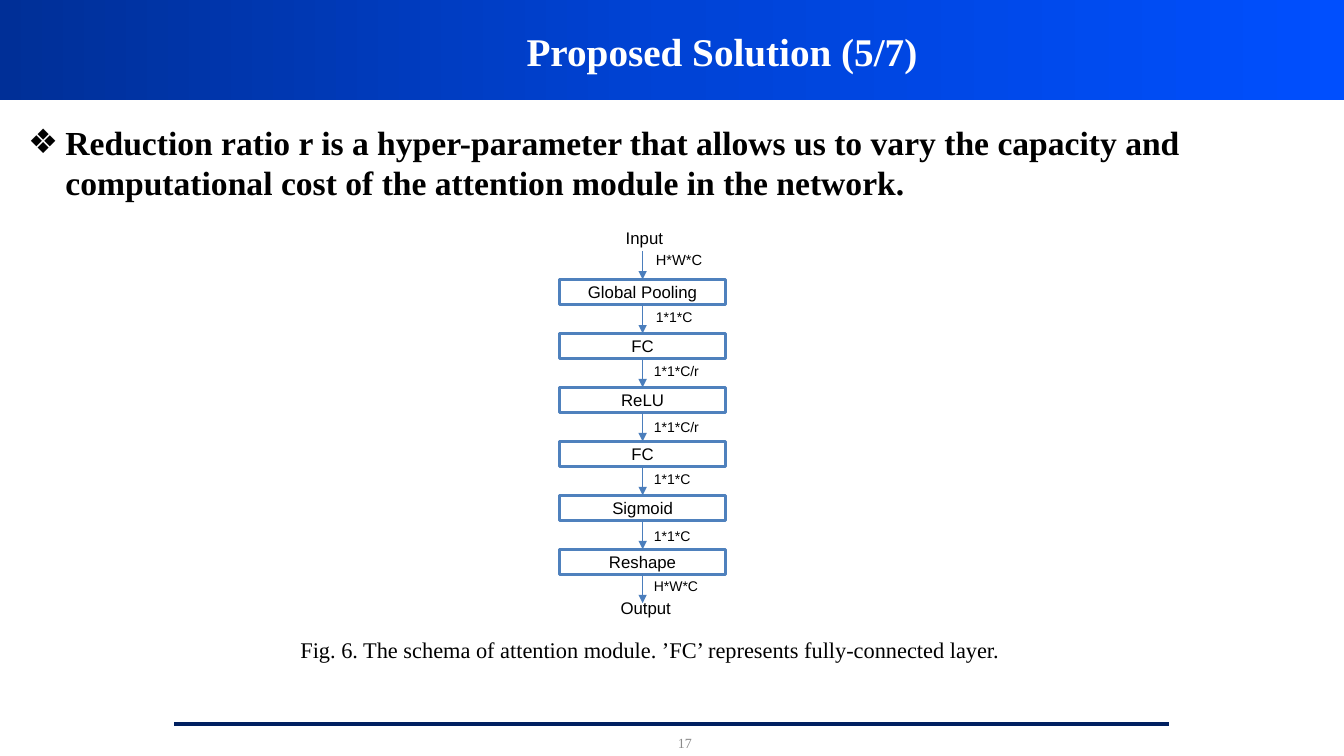
"""Build the attention-module slide with its flow diagram."""
import copy

from lxml import etree
from pptx import Presentation
from pptx import util as u
from pptx.dml.color import RGBColor
from pptx.enum import shapes, text
from pptx.oxml import ns


def put_text(sp, content, size, font="Arial", color="000000", bold=False,
             align=text.PP_ALIGN.LEFT, anchor=text.MSO_ANCHOR.TOP, insets=None, bullet=None):
    tf = sp.text_frame
    tf.word_wrap = True
    tf.vertical_anchor = anchor
    if insets:
        tf.margin_left, tf.margin_top, tf.margin_right, tf.margin_bottom = map(u.Cm, insets)
    p = tf.paragraphs[0]
    p.alignment = align
    if bullet:
        pPr = p._p.get_or_add_pPr()
        pPr.set("marL", str(u.Cm(0.97)))
        pPr.set("indent", str(u.Cm(-0.94)))
        etree.SubElement(pPr, ns.qn("a:buFont")).set("typeface", "Arial")
        etree.SubElement(pPr, ns.qn("a:buChar")).set("char", bullet)
    r = p.add_run()
    r.text = content
    r.font.size = u.Pt(size)
    r.font.name = font
    r.font.bold = bold
    r.font.color.rgb = RGBColor.from_string(color)


def add_line(x1, y1, x2, y2, color, width, arrow=False):
    cn = s.shapes.add_connector(shapes.MSO_CONNECTOR.STRAIGHT, *map(u.Cm, (x1, y1, x2, y2)))
    cn.line.color.rgb = RGBColor.from_string(color)
    cn.line.width = u.Pt(width)
    spPr = cn._element.spPr
    if arrow:
        etree.SubElement(spPr.find(ns.qn("a:ln")), ns.qn("a:tailEnd")).set("type", "triangle")
    etree.SubElement(spPr, ns.qn("a:effectLst"))
    return cn


SERIF = "Times New Roman"
CENTER, MIDDLE = text.PP_ALIGN.CENTER, text.MSO_ANCHOR.MIDDLE

prs = Presentation()
prs.slide_width, prs.slide_height = u.Cm(33.87), u.Cm(19.05)
s = prs.slides.add_slide(prs.slide_layouts[6])

band = s.shapes.add_shape(shapes.MSO_SHAPE.RECTANGLE, 0, 0, prs.slide_width, u.Cm(2.52))
band.shadow.inherit = False
band.line.fill.background()
band.fill.gradient()
band.fill.gradient_angle = 0
first = band._element.spPr.find(ns.qn("a:gradFill")).find(ns.qn("a:gsLst"))[0]
first.addnext(copy.deepcopy(first))
for stop, (position, color) in zip(band.fill.gradient_stops,
                                   [(0, "002F97"), (0.5, "0043D6"), (1, "004FFE")]):
    stop.position = position
    stop.color.rgb = RGBColor.from_string(color)

add_line(4.39, 18.24, 29.46, 18.24, "002060", 2.5)

title = s.shapes.add_textbox(u.Cm(1.73), u.Cm(0.69), u.Cm(30.4), u.Cm(2.16))
put_text(title, "Proposed Solution (5/7)", 28, SERIF, "FFFFFF", True, CENTER,
         insets=(2.78, 0, 0.25, 0))

body = s.shapes.add_textbox(u.Cm(0.43), u.Cm(1.47), u.Cm(30.15), u.Cm(14.2))
put_text(body, "Reduction ratio r is a hyper-parameter that allows us to vary the capacity and "
         "computational cost of the attention module in the network.", 24, SERIF, bold=True,
         insets=(0.25, 1.59, 0.25, 0.13), bullet="❖")

number = s.shapes.add_textbox(u.Cm(13.31), u.Cm(18.52), u.Cm(7.9), u.Cm(0.41))
put_text(number, "17", 10, SERIF, "8B8B8B", align=CENTER, anchor=MIDDLE, insets=(0.25, 0, 0.25, 0))

caption = s.shapes.add_textbox(u.Cm(7.32), u.Cm(15.77), u.Cm(24.13), u.Cm(3.18))
put_text(caption, "Fig. 6. The schema of attention module. ’FC’ represents fully-connected layer.",
         16, SERIF, insets=(0.25, 0.25, 0.25, 0.25))

LEFT, TOP, WIDTH, HEIGHT, PITCH = 14.11, 7.04, 4.17, 0.64, 1.36
AXIS = LEFT + WIDTH / 2
GAP = PITCH - HEIGHT

layers = []
for i, name in enumerate(["Global Pooling", "FC", "ReLU", "FC", "Sigmoid", "Reshape"]):
    sp = s.shapes.add_shape(shapes.MSO_SHAPE.RECTANGLE, u.Cm(LEFT), u.Cm(TOP + i * PITCH),
                            u.Cm(WIDTH), u.Cm(HEIGHT))
    sp.shadow.inherit = False
    sp.fill.solid()
    sp.fill.fore_color.rgb = RGBColor.from_string("FFFFFF")
    sp.line.color.rgb = RGBColor.from_string("4F81BD")
    sp.line.width = u.Pt(2)
    put_text(sp, name, 12, align=CENTER, anchor=MIDDLE)
    layers.append(sp)

for i in range(len(layers) + 1):
    end = TOP + i * PITCH
    arrow = add_line(AXIS, end - GAP, AXIS, end, "4B7EBC", 0.75, arrow=True)
    if i > 0:
        arrow.begin_connect(layers[i - 1], 2)
    if i < len(layers):
        arrow.end_connect(layers[i], 0)

for name, left, top in [("Input", 15.52, 5.61), ("Output", 15.39, 14.94)]:
    put_text(s.shapes.add_textbox(u.Cm(left), u.Cm(top), u.Cm(2.03), u.Cm(0.76)), name, 12)

for size_label, left, top, size in [
    ("H*W*C", 16.28, 6.2, 10.5),
    ("1*1*C", 16.28, 7.65, 10),
    ("1*1*C/r", 16.23, 9.02, 10),
    ("1*1*C/r", 16.23, 10.41, 10),
    ("1*1*C", 16.23, 11.73, 10),
    ("1*1*C", 16.23, 13.16, 10),
    ("H*W*C", 16.23, 14.43, 10),
]:
    put_text(s.shapes.add_textbox(u.Cm(left), u.Cm(top), u.Cm(2.62), u.Cm(0.69)), size_label, size)

prs.save("out.pptx")
